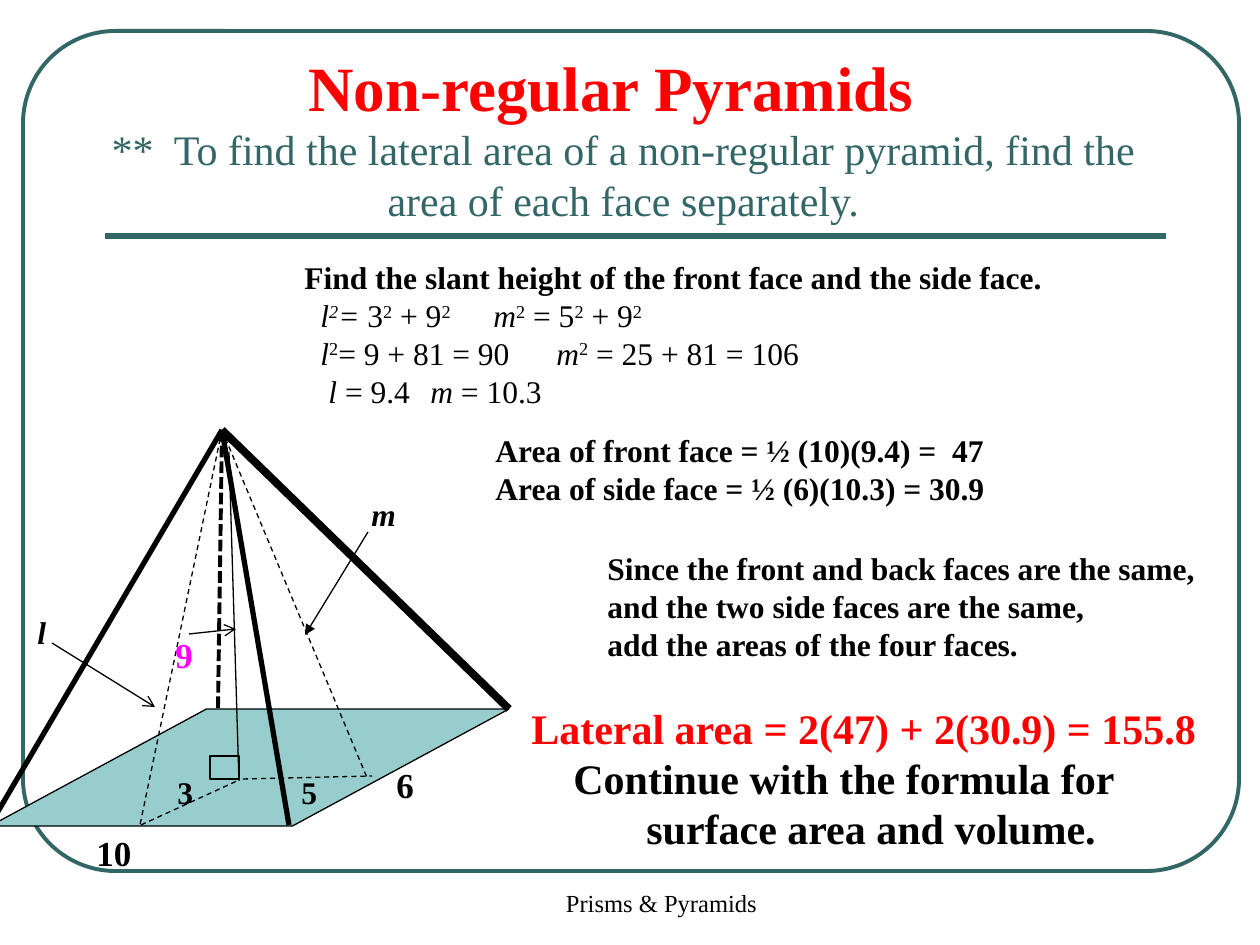
import dataclasses
import typing

import pptx
import pptx.dml.color
import pptx.enum.dml
import pptx.enum.shapes
import pptx.enum.text
import pptx.oxml
import pptx.oxml.ns
import pptx.util

Shape = pptx.enum.shapes.MSO_SHAPE
Dash = pptx.enum.dml.MSO_LINE
Align = pptx.enum.text.PP_ALIGN
Pair = tuple[int, int]
Box = tuple[int, int, int, int]

FONT = "Times New Roman"
SCALE = 914400 / 126  # EMU per px
TAB = 378
HEX = {"teal": "336666", "base": "97CDCC", "ink": "000000",
       "red": "FF0000", "pink": "FF00FF"}


@dataclasses.dataclass
class Para:
    runs: list[tuple[str, str]]  # text and style: b bold, i italic, ^ raised
    indent: int = 0
    color: str = "ink"
    align: typing.Any = Align.LEFT
    before: float = 0


@dataclasses.dataclass
class Block:
    box: Box
    size: int
    paras: list[Para]


@dataclasses.dataclass
class Edge:
    start: Pair
    end: Pair
    width: float = 0.75
    dash: typing.Any = None
    head: str = ""
    color: str = "ink"


def emu(px: int) -> int:
    return round(px * SCALE)


def tint(name: str) -> pptx.dml.color.RGBColor:
    return pptx.dml.color.RGBColor.from_string(HEX[name])


def add_sub(parent, tag: str, **attrs: str):
    node = pptx.oxml.parse_xml(f"<a:{tag} {pptx.oxml.ns.nsdecls('a')}/>")
    for key, value in attrs.items():
        node.set(key, value)
    parent.append(node)
    return node


def write(frame, size: int, paras: list[Para]) -> None:
    frame.word_wrap = True
    for index, item in enumerate(paras):
        para = frame.add_paragraph() if index else frame.paragraphs[0]
        para.alignment = item.align
        if item.before:
            para.space_before = pptx.util.Pt(item.before)
        props = para._p.get_or_add_pPr()
        props.set("marL", "0")
        props.set("indent", str(emu(item.indent)))
        if any("\t" in text for text, style in item.runs):
            add_sub(add_sub(props, "tabLst"), "tab", pos=str(emu(TAB)), algn="l")
        for text, style in item.runs:
            run = para.add_run()
            run.text = text
            look = {"name": FONT, "size": pptx.util.Pt(size),
                    "bold": "b" in style, "italic": "i" in style}
            for key, value in look.items():
                setattr(run.font, key, value)
            run.font.color.rgb = tint(item.color)
            if "^" in style:
                run._r.get_or_add_rPr().set("baseline", "30000")


def draw_text(slide, block: Block) -> None:
    shape = slide.shapes.add_textbox(*map(emu, block.box))
    write(shape.text_frame, block.size, block.paras)


def draw_edge(slide, edge: Edge) -> None:
    line = slide.shapes.add_connector(
        pptx.enum.shapes.MSO_CONNECTOR.STRAIGHT,
        *map(emu, edge.start + edge.end))
    line.line.color.rgb = tint(edge.color)
    line.line.width = pptx.util.Pt(edge.width)
    if edge.dash:
        line.line.dash_style = edge.dash
    if edge.head:
        add_sub(line.line._get_or_add_ln(), "tailEnd", type=edge.head)
    add_sub(line._element.spPr, "effectLst")


def draw_shape(slide, kind, box: Box, fill: str, color: str, width: float,
               adjust: float | None = None) -> None:
    shape = slide.shapes.add_shape(kind, *map(emu, box))
    shape.shadow.inherit = False
    if fill:
        shape.fill.solid()
        shape.fill.fore_color.rgb = tint(fill)
    else:
        shape.fill.background()
    shape.line.color.rgb = tint(color)
    shape.line.width = pptx.util.Pt(width)
    if adjust is not None:
        shape.adjustments[0] = adjust


def bold(text: str, **rest) -> Para:
    return Para([(text, "b")], **rest)


def label(text: str, box: Box, size: int = 18, style: str = "b", **rest) -> Block:
    return Block(box, size, [Para([(text, style)], **rest)])


# Pyramid: every edge and slant height starts at the apex
APEX = (222, 430)
LEFT = Edge(APEX, (-10, 825), 3)
EDGES = [
    Edge(APEX, (218, 709), 2.25, Dash.SQUARE_DOT),
    Edge(APEX, (509, 709), 4.5),
    Edge(APEX, (289, 825), 3),
    Edge((229, 452), (239, 781)),
    Edge(APEX, (368, 780), dash=Dash.DASH),
    Edge(APEX, (140, 825), dash=Dash.DASH),
    Edge((243, 779), (372, 776), dash=Dash.DASH),
    Edge((141, 825), (237, 781), dash=Dash.DASH),
    Edge((189, 634), (236, 629), head="arrow"),
    Edge((368, 532), (305, 635), head="triangle"),
    Edge((52, 643), (155, 707), head="arrow"),
]

LABELS = [
    label("6", (384, 757, 110, 77), 20, before=2.5),
    label("10", (84, 825, 110, 77), 20, before=2.5),
    label("9", (155, 627, 54, 55), 20, before=2.5, indent=8, color="pink"),
    label("m", (359, 489, 96, 73), style="bi"),
    label("l", (25, 607, 82, 72), style="bi"),
    label("5", (289, 767, 74, 50)),
    label("3", (165, 767, 73, 50)),
]

TEXTS = [
    label("Prisms & Pyramids", (462, 882, 399, 63), 14, "", align=Align.CENTER),
    label("Non-regular Pyramids", (296, 42, 785, 89), 36, color="red"),
    Block((292, 252, 876, 165), 18, [
        bold("Find the slant height of the front face and the side face."),
        Para([("l", "i"), ("2", "i^"), ("= ", "i"), ("3", ""), ("2", "^"),
              (" + 9", ""), ("2", "^"), ("\t", ""), ("m", "i"), ("2", "^"),
              (" = 5", ""), ("2", "^"), (" + 9", ""), ("2", "^")], 16),
        Para([("l", "i"), ("2", "^"), ("= 9 + 81 = 90\t", ""), ("m", "i"),
              ("2", "^"), (" = 25 + 81 = 106", "")], 16),
        Para([("l ", "i"), ("= 9.4\t", ""), ("m", "i"), (" = 10.3", "")], 24),
    ]),
    Block((483, 425, 685, 127), 18, [
        bold("Area of front face = ½ (10)(9.4) =  47"),
        bold("Area of side face = ½ (6)(10.3) = 30.9"),
    ]),
    Block((595, 543, 640, 127), 18, [
        bold("Since the front and back faces are the same,"),
        bold("and the two side faces are the same,"),
        bold("add the areas of the four faces."),
    ]),
    Block((519, 696, 791, 165), 24, [
        bold("Lateral area = 2(47) + 2(30.9) = 155.8", color="red"),
        bold("Continue with the formula for", indent=42),
        bold("surface area and volume.", indent=115),
    ]),
]


def main() -> None:
    deck = pptx.Presentation()
    deck.slide_width, deck.slide_height = emu(1260), emu(945)
    slide = deck.slides.add_slide(deck.slide_layouts[5])

    # Frame and rule
    draw_shape(slide, Shape.ROUNDED_RECTANGLE, (23, 31, 1216, 840),
               "", "teal", 2.25, 0.11)
    draw_edge(slide, Edge((105, 236), (1166, 236), 3, color="teal"))

    # Title
    title = slide.shapes.title
    place = dict(zip(("left", "top", "width", "height"),
                     map(emu, (93, 105, 1061, 126))))
    for key, value in place.items():
        setattr(title, key, value)
    frame = title.text_frame
    frame.auto_size = pptx.enum.text.MSO_AUTO_SIZE.NONE
    frame.vertical_anchor = pptx.enum.text.MSO_ANCHOR.BOTTOM
    write(frame, 24, [Para(
        [("**  To find the lateral area of a non-regular pyramid, "
          "find the area of each face separately.", "")],
        color="teal", align=Align.CENTER)])

    # Pyramid with its base and right-angle mark
    draw_edge(slide, LEFT)
    draw_shape(slide, Shape.PARALLELOGRAM, (-10, 709, 519, 117),
               "base", "ink", 0.75, 1.85)
    draw_shape(slide, Shape.RECTANGLE, (210, 756, 29, 23), "base", "ink", 0.75)
    for edge in EDGES:
        draw_edge(slide, edge)

    # Wording
    for block in TEXTS + LABELS:
        draw_text(slide, block)
    deck.save("out.pptx")


if __name__ == "__main__":
    main()
